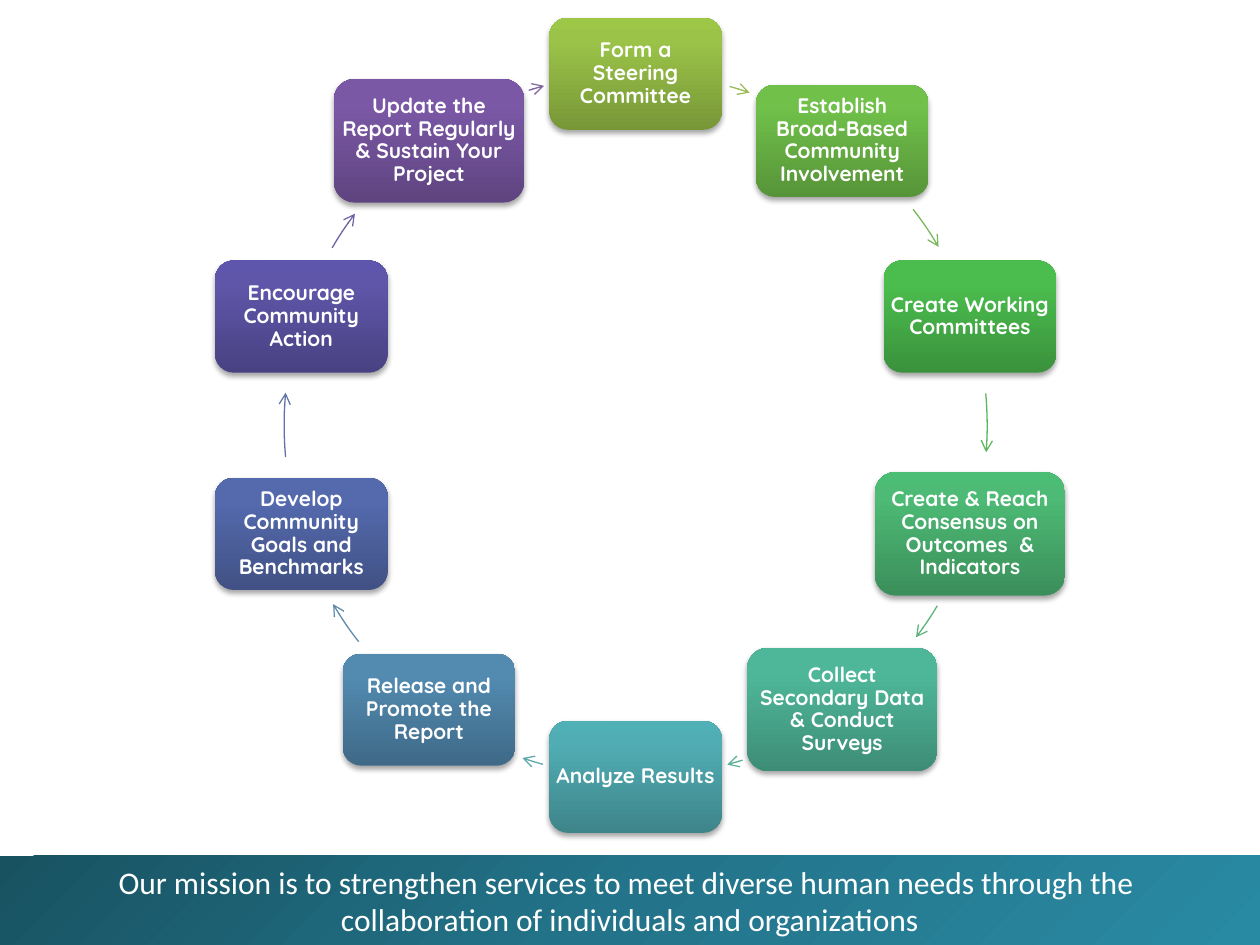
from math import cos, radians, sin

from lxml.etree import SubElement
from pptx import Presentation
from pptx.dml.color import RGBColor
from pptx.enum.shapes import MSO_SHAPE
from pptx.enum.text import MSO_ANCHOR, PP_ALIGN
from pptx.oxml.ns import qn
from pptx.util import Inches, Pt

COLORS = {"white": "FFFFFF", "shadow": "000000"}
MISSION_GRADIENT = [(0, "185261"), (50, "23748A"), (100, "298AA3")]
MISSION = [
    "Our mission is to strengthen services to meet diverse human needs through the ",
    "collaboration of individuals and organizations",
]

SMALL, LARGE = (1.37, 0.89), (1.51, 0.98)
# Clockwise from the top: label, size, gradient from bottom to top,
# arrow colour, arrow start and end in degrees from the top
STEPS = [
    ("Form a Steering Committee", SMALL,
     ("779737", "9BC348", "9DC746"), "9BBB59", 15.5, 18.9),
    ("Establish Broad-Based Community Involvement", SMALL,
     ("579439", "70C04A", "70C348"), "79B85A", 52.1, 59.5),
    ("Create Working Committees", SMALL,
     ("3A923C", "4BBD4E", "49C04C"), "5BB65D", 84.8, 94.4),
    ("Create & Reach Consensus on Outcomes  & Indicators", LARGE,
     ("3B8F5A", "4DBA75", "4BBD75"), "5CB37C", 120.9, 127.1),
    ("Collect Secondary Data & Conduct Surveys", LARGE,
     ("3D8D76", "4FB799", "4DBA9B"), "5EB099", 162.3, 164.9),
    ("Analyze Results", SMALL,
     ("3E858A", "50ADB3", "4FB0B6"), "5FA8AD", 195.3, 198.8),
    ("Release and Promote the Report", SMALL,
     ("3F6A88", "528AB0", "518BB3"), "608CAB", 232, 239.4),
    ("Develop Community Goals and Benchmarks", SMALL,
     ("415185", "546AAD", "5369AF"), "6172A8", 264.8, 275.3),
    ("Encourage Community Action", SMALL,
     ("494282", "5F56A9", "5E55AC"), "6A63A5", 300.3, 307),
    ("Update the Report Regularly & Sustain Your Project", LARGE,
     ("5F4480", "7B58A6", "7C57A8"), "8064A2", 342.3, 344.9),
]
# The ring runs through the middle of the top box
TOP_BOX_LEFT, TOP_BOX_TOP, RADIUS = 4.36, 0.14, 2.79
CENTER_X = TOP_BOX_LEFT + SMALL[0] / 2
CENTER_Y = TOP_BOX_TOP + SMALL[1] / 2 + RADIUS


def ring_point(degrees):
    """Point on the ring, in inches, clockwise from the top."""
    angle = radians(degrees)
    return CENTER_X + RADIUS * sin(angle), CENTER_Y - RADIUS * cos(angle)


def fill_gradient(shape, stops, degrees):
    shape.fill.gradient()
    gradient = shape._element.spPr.find(qn("a:gradFill"))
    stop_list = gradient.find(qn("a:gsLst"))
    for stop in list(stop_list):
        stop_list.remove(stop)
    for position, color in stops:
        stop = SubElement(stop_list, qn("a:gs"), pos=str(position * 1000))
        SubElement(stop, qn("a:srgbClr"), val=color)
    gradient.find(qn("a:lin")).set("ang", str(degrees * 60000))


def add_shadow(shape):
    effects = shape._element.spPr.find(qn("a:effectLst"))
    shadow = SubElement(effects, qn("a:outerShdw"), blurRad=str(Pt(3.1)),
                        dist=str(Pt(1.8)), dir="5400000", rotWithShape="0")
    color = SubElement(shadow, qn("a:srgbClr"), val=COLORS["shadow"])
    SubElement(color, qn("a:alpha"), val="35000")


def add_box(page, kind, area, stops, degrees, lines, font_name, size, bold=False):
    box = page.shapes.add_shape(kind, *(Inches(value) for value in area))
    box.line.fill.background()
    box.shadow.inherit = False
    fill_gradient(box, stops, degrees)
    frame = box.text_frame
    frame.word_wrap = True
    frame.vertical_anchor = MSO_ANCHOR.MIDDLE
    frame.text = "\n".join(lines)
    for paragraph in frame.paragraphs:
        paragraph.alignment = PP_ALIGN.CENTER
        for span in paragraph.runs:
            span.font.name = font_name
            span.font.size = Pt(size)
            span.font.bold = bold
            span.font.color.rgb = RGBColor.from_string(COLORS["white"])
    return box


def add_step(page, degrees, label, size, shades):
    x, y = ring_point(degrees)
    width, height = size
    area = (x - width / 2, y - height / 2, width, height)
    box = add_box(page, MSO_SHAPE.ROUNDED_RECTANGLE, area,
                  zip((0, 80, 100), shades), 270, [label], "Quicksand", 12, True)
    add_shadow(box)
    # The rounded corners already hold the text in from the edges
    frame = box.text_frame
    frame.margin_left = frame.margin_right = Inches(0.01)
    frame.margin_top = frame.margin_bottom = Inches(0.01)
    frame.paragraphs[0].line_spacing = 0.9


def add_arc_arrow(page, start, end, color):
    # The frame spans the whole ring; the outline is only the arc
    left, top = CENTER_X - RADIUS, CENTER_Y - RADIUS
    builder = page.shapes.build_freeform(Inches(left), Inches(top))
    corner = (Inches(left + 2 * RADIUS), Inches(top + 2 * RADIUS))
    builder.add_line_segments([corner], close=False)
    arrow = builder.convert_to_shape()
    outline = next(arrow._element.iter(qn("a:path")))
    for part in list(outline):
        outline.remove(part)
    x, y = ring_point(start)
    move = SubElement(outline, qn("a:moveTo"))
    SubElement(move, qn("a:pt"), x=str(Inches(x - left)), y=str(Inches(y - top)))
    radius = str(Inches(RADIUS))
    SubElement(outline, qn("a:arcTo"), wR=radius, hR=radius,
               stAng=str(round((start + 270) % 360 * 60000)),
               swAng=str(round((end - start) * 60000)))
    arrow.fill.background()
    arrow.shadow.inherit = False
    arrow.line.color.rgb = RGBColor.from_string(color)
    arrow.line.width = Pt(0.75)
    SubElement(arrow.line._get_or_add_ln(), qn("a:tailEnd"), type="arrow")


def main():
    deck = Presentation()
    deck.slide_width, deck.slide_height = Inches(10), Inches(7.5)
    page = deck.slides.add_slide(deck.slide_layouts[6])

    # Mission band
    add_box(page, MSO_SHAPE.RECTANGLE, (0, 6.79, 10, 0.71),
            MISSION_GRADIENT, 45, MISSION, "Calibri", 18)

    # Cycle of steps
    for index, (label, size, shades, color, start, end) in enumerate(STEPS):
        add_step(page, index * 360 / len(STEPS), label, size, shades)
        add_arc_arrow(page, start, end, color)

    deck.save("out.pptx")


if __name__ == "__main__":
    main()
